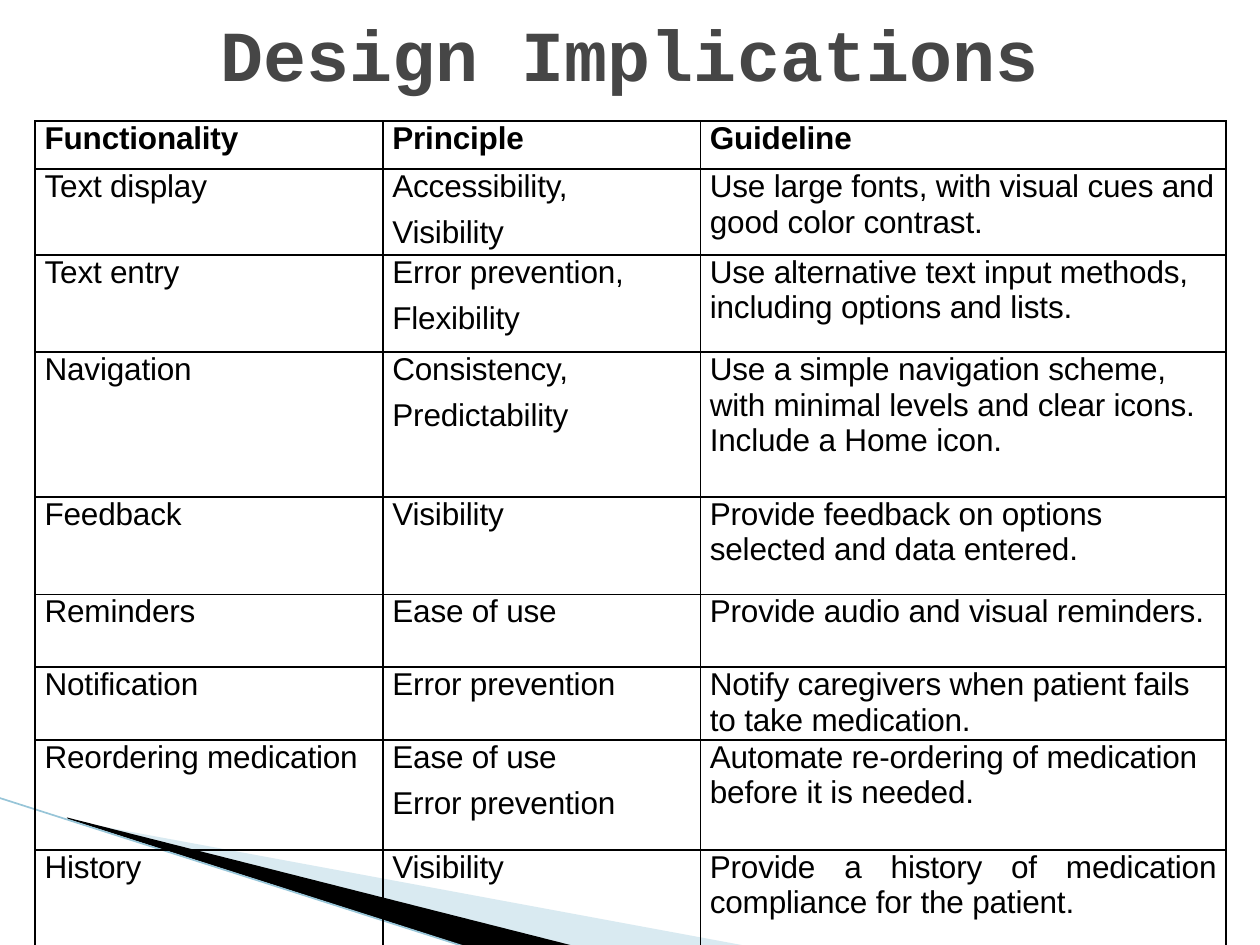
import pptx
import pptx.util
import pptx.dml.color
import pptx.enum.shapes
import pptx.enum.text
import pptx.oxml
import pptx.oxml.ns
import lxml.etree

Cm, Pt = pptx.util.Cm, pptx.util.Pt
ALIGN = pptx.enum.text.PP_ALIGN
LEFT, JUSTIFY, CENTER = ALIGN.LEFT, ALIGN.JUSTIFY, ALIGN.CENTER

# Content
TITLE = "Design Implications"
HEADER = ("Functionality", "Principle", "Guideline")
# Row height, functionality, principles, guideline
ROWS = [
    (1.73, "Text display", ["Accessibility,", "Visibility"],
     "Use large fonts, with visual cues and good color contrast."),
    (1.96, "Text entry", ["Error prevention,", "Flexibility"],
     "Use alternative text input methods, including options and lists."),
    (2.92, "Navigation", ["Consistency,", "Predictability"],
     "Use a simple navigation scheme, with minimal levels and clear icons. Include a Home icon."),
    (1.96, "Feedback", ["Visibility"],
     "Provide feedback on options selected and data entered."),
    (1.47, "Reminders", ["Ease of use"],
     "Provide audio and visual reminders."),
    (1.47, "Notification", ["Error prevention"],
     "Notify caregivers when patient fails to take medication."),
    (2.21, "Reordering medication", ["Ease of use", "Error prevention"],
     "Automate re-ordering of medication before it is needed."),
    (1.96, "History", ["Visibility"],
     "Provide a history of medication compliance for the patient."),
]
HEADER_HEIGHT = 0.97
COLUMN_WIDTHS = (7.01, 6.4, 10.59)
COLORS = {"title": "464646", "text": "000000", "border": "000000",
          "pale": "A0CBDC", "dark": "000000", "edge": "97C5D8"}
# Corner wedges: colour, opacity in percent, outline points in cm
WEDGES = [
    ("pale", 40, [(1.4, 16.54), (15.11, 19.08), (11.58, 19.08), (1.4, 16.51)]),
    ("dark", 100, [(1.35, 16.48), (11.61, 19.08), (9.45, 19.1), (1.37, 16.51)]),
]


def rgb(name):
    return pptx.dml.color.RGBColor.from_string(COLORS[name])


def add_wedge(slide, color, opacity, points):
    corners = [(Cm(x), Cm(y)) for x, y in points]
    builder = slide.shapes.build_freeform(*corners[0], scale=1.0)
    builder.add_line_segments(corners[1:], close=True)
    wedge = builder.convert_to_shape()
    wedge.shadow.inherit = False
    wedge.line.fill.background()
    wedge.fill.solid()
    wedge.fill.fore_color.rgb = rgb(color)
    if opacity < 100:
        fill_color = wedge.fill._xPr.find(".//" + pptx.oxml.ns.qn("a:srgbClr"))
        alpha = lxml.etree.SubElement(fill_color, pptx.oxml.ns.qn("a:alpha"))
        alpha.set("val", str(opacity * 1000))


def write_span(para, text, size, font, color, bold):
    span = para.add_run()
    span.text = text
    span.font.size = Pt(size)
    span.font.name = font
    span.font.bold = bold
    span.font.color.rgb = rgb(color)
    return span


def draw_borders(cell):
    properties = cell._tc.get_or_add_tcPr()
    for side in "LRTB":
        properties.append(pptx.oxml.parse_xml(
            f'<a:ln{side} {pptx.oxml.ns.nsdecls("a")} w="12700"><a:solidFill>'
            f'<a:srgbClr val="{COLORS["border"]}"/></a:solidFill></a:ln{side}>'))


def fill_cell(cell, texts, align, bold):
    draw_borders(cell)
    cell.fill.background()
    cell.margin_left = cell.margin_right = Cm(0.19)
    cell.margin_top = cell.margin_bottom = 0
    frame = cell.text_frame
    for index, text in enumerate(texts):
        para = frame.add_paragraph() if index else frame.paragraphs[0]
        para.alignment = align
        para.space_after = Pt(6)
        span = write_span(para, text, 18, "Arial", "text", bold)
        span.font._element.set("spc", "-10")


def main():
    deck = pptx.Presentation()
    deck.slide_width, deck.slide_height = Cm(25.4), Cm(19.05)
    slide = deck.slides.add_slide(deck.slide_layouts[5])

    # Corner decoration
    for wedge in WEDGES:
        add_wedge(slide, *wedge)
    edge = slide.shapes.add_connector(
        pptx.enum.shapes.MSO_CONNECTOR.STRAIGHT,
        Cm(-0.03), Cm(16.08), Cm(9.42), Cm(19.1))
    edge.line.color.rgb = rgb("edge")
    edge.line.width = Pt(0.95)
    lxml.etree.SubElement(edge._element.spPr, pptx.oxml.ns.qn("a:effectLst"))

    # Title
    title = slide.shapes.title
    title.left, title.top, title.width, title.height = Cm(1.27), 0, Cm(22.86), Cm(2.13)
    frame = title.text_frame
    frame.auto_size = pptx.enum.text.MSO_AUTO_SIZE.NONE
    frame.vertical_anchor = pptx.enum.text.MSO_ANCHOR.MIDDLE
    frame.paragraphs[0].alignment = CENTER
    write_span(frame.paragraphs[0], TITLE, 41, "Courier New", "title", True)

    # Table
    heights = [HEADER_HEIGHT] + [row[0] for row in ROWS]
    table = slide.shapes.add_table(
        len(heights), len(COLUMN_WIDTHS), Cm(0.71), Cm(2.44),
        Cm(sum(COLUMN_WIDTHS)), Cm(sum(heights))).table
    table.first_row = table.horz_banding = False
    for column, width in zip(table.columns, COLUMN_WIDTHS):
        column.width = Cm(width)
    for row, height in zip(table.rows, heights):
        row.height = Cm(height)
    for column, text in enumerate(HEADER):
        fill_cell(table.cell(0, column), [text], LEFT, True)
    for number, (_, functionality, principles, guideline) in enumerate(ROWS, 1):
        principle_align = JUSTIFY if number > 2 else LEFT
        guideline_align = JUSTIFY if number == len(ROWS) else LEFT
        fill_cell(table.cell(number, 0), [functionality], JUSTIFY, False)
        fill_cell(table.cell(number, 1), principles, principle_align, False)
        fill_cell(table.cell(number, 2), [guideline], guideline_align, False)

    deck.save("out.pptx")


if __name__ == "__main__":
    main()
